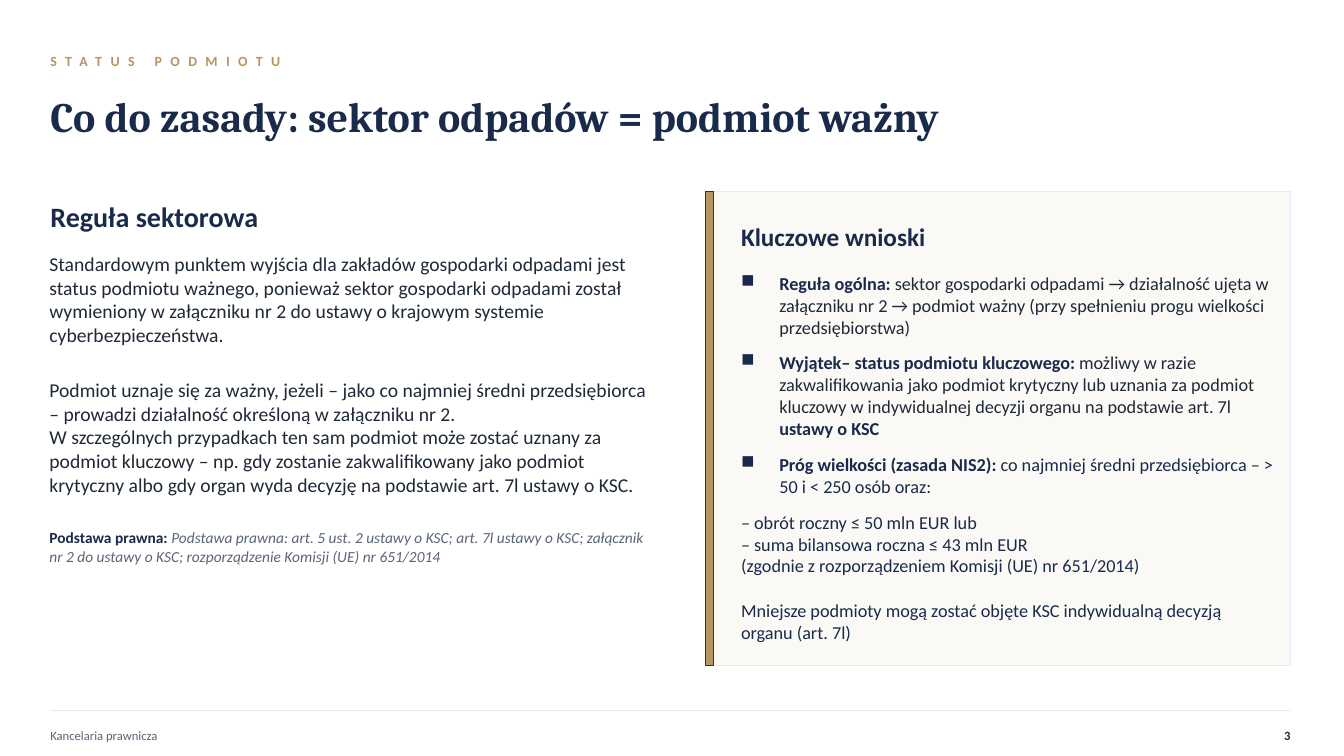
"""Build the slide on the status of entities in the waste sector."""
import pptx
import pptx.dml.color
import pptx.enum.shapes
import pptx.enum.text
import pptx.oxml
import pptx.oxml.ns
import pptx.util

Inches = pptx.util.Inches
Pt = pptx.util.Pt
ALIGN = pptx.enum.text.PP_ALIGN
ANCHOR = pptx.enum.text.MSO_ANCHOR

COLORS = {
    "navy": "1A2A4A",
    "ink": "1F2937",
    "gray": "5B6478",
    "gold": "B8945F",
    "cream": "FAF9F6",
    "rule": "E8EAF0",
    "edge": "333333",
}

RULE = [
    (6, [("Standardowym punktem wyjścia dla zakładów gospodarki odpadami jest "
          "status podmiotu ważnego, ponieważ sektor gospodarki odpadami został "
          "wymieniony w załączniku nr 2 do ustawy o krajowym systemie "
          "cyberbezpieczeństwa.", "ink", "")]),
    (0, [("Podmiot uznaje się za ważny, jeżeli – jako co najmniej średni "
          "przedsiębiorca – prowadzi działalność określoną w załączniku nr 2.",
          "ink", "")]),
    (6, [("W szczególnych przypadkach ten sam podmiot może zostać uznany za "
          "podmiot kluczowy – np. gdy zostanie zakwalifikowany jako podmiot "
          "krytyczny albo gdy organ wyda decyzję na podstawie art. 7l ustawy "
          "o KSC.", "ink", "")]),
    (0, [("Podstawa prawna: ", "navy", "b"),
         ("Podstawa prawna: art. 5 ust. 2 ustawy o KSC; art. 7l ustawy o KSC; "
          "załącznik nr 2 do ustawy o KSC; rozporządzenie Komisji (UE) "
          "nr 651/2014", "gray", "i")]),
]

POINTS = [
    (10, [("Reguła ogólna: ", "navy", "b"),
          ("sektor gospodarki odpadami → działalność ujęta w załączniku nr 2 → "
           "podmiot ważny (przy spełnieniu progu wielkości przedsiębiorstwa)",
           "ink", "")]),
    (10, [("Wyjątek– status podmiotu kluczowego: ", "navy", "b"),
          ("możliwy w razie zakwalifikowania jako podmiot krytyczny lub uznania "
           "za podmiot kluczowy w indywidualnej decyzji organu na podstawie "
           "art. 7l ", "ink", ""),
          ("ustawy o KSC", "navy", "b")]),
    (10, [("Próg wielkości (zasada NIS2): ", "navy", "b"),
          ("co najmniej średni przedsiębiorca – > 50 i < 250 osób oraz:",
           "navy", "")]),
    (0, [("– obrót roczny ≤ 50 mln EUR lub", "navy", "")]),
    (0, [("– suma bilansowa roczna ≤ 43 mln EUR", "navy", "")]),
    (16, [("(zgodnie z rozporządzeniem Komisji (UE) nr 651/2014)", "navy", "")]),
    (0, [("Mniejsze podmioty mogą zostać objęte KSC indywidualną decyzją organu "
          "(art. 7l)", "navy", "")]),
]


def paint(hue):
    """Return the named colour."""
    return pptx.dml.color.RGBColor.from_string(COLORS[hue])


def style(font, size, hue, bold=False, face="Calibri"):
    """Format a font."""
    font.name = face
    font.size = Pt(size)
    font.bold = bold
    font.color.rgb = paint(hue)


def frame(shape, anchor):
    """Clear the margins of a text shape and return its frame."""
    text = shape.text_frame
    text.word_wrap = True
    text.auto_size = pptx.enum.text.MSO_AUTO_SIZE.NONE
    text.vertical_anchor = anchor
    text.margin_left = text.margin_right = 0
    text.margin_top = text.margin_bottom = 0
    return text


def label(slide, box, words, size, hue, bold=True, align=ALIGN.LEFT):
    """Add one line of text and return its run."""
    shape = slide.shapes.add_textbox(*map(Inches, box))
    line = frame(shape, ANCHOR.MIDDLE).paragraphs[0]
    line.text = words
    line.alignment = align
    style(line.runs[0].font, size, hue, bold)
    return line.runs[0]


def head(slide, words):
    """Place and format the title."""
    title = slide.shapes.title
    title.left, title.top = Inches(0.5), Inches(0.8)
    title.width, title.height = Inches(11.32), Inches(0.7)
    line = frame(title, ANCHOR.MIDDLE).paragraphs[0]
    line.text = words
    line.alignment = ALIGN.LEFT
    style(line.runs[0].font, 30, "navy", True, "Cambria")


def body(slide, box, parts, size):
    """Add a block of mixed paragraphs and return them."""
    shape = slide.shapes.add_textbox(*map(Inches, box))
    text = frame(shape, ANCHOR.TOP)
    for num, (after, runs) in enumerate(parts):
        line = text.add_paragraph() if num else text.paragraphs[0]
        line.space_after = Pt(after)
        for words, hue, mark in runs:
            run = line.add_run()
            run.text = words
            style(run.font, size, hue, mark == "b")
            run.font.italic = mark == "i"
    return text.paragraphs


def bullet(line):
    """Give a paragraph a square bullet and a hanging indent."""
    props = line._p.get_or_add_pPr()
    props.set("marL", str(Inches(0.38)))
    props.set("indent", str(Inches(-0.38)))
    space = pptx.oxml.ns.nsdecls("a")
    props.append(pptx.oxml.parse_xml(f'<a:buChar {space} char="■"/>'))


def block(slide, box, fill, edge, width):
    """Add an outlined rectangle."""
    kind = pptx.enum.shapes.MSO_SHAPE.RECTANGLE
    shape = slide.shapes.add_shape(kind, *map(Inches, box))
    shape.shadow.inherit = False
    shape.fill.solid()
    shape.fill.fore_color.rgb = paint(fill)
    shape.line.color.rgb = paint(edge)
    shape.line.width = Pt(width)


def rule(slide, left, right, top):
    """Add a thin level line."""
    kind = pptx.enum.shapes.MSO_CONNECTOR.STRAIGHT
    ends = map(Inches, (left, top, right, top))
    line = slide.shapes.add_connector(kind, *ends)
    line.line.color.rgb = paint("rule")
    line.line.width = Pt(0.75)
    space = pptx.oxml.ns.nsdecls("a")
    effect = pptx.oxml.parse_xml(f"<a:effectLst {space}/>")
    line._element.spPr.append(effect)


def main():
    """Build and save the slide."""
    deck = pptx.Presentation()
    deck.slide_width, deck.slide_height = Inches(13.33), Inches(7.5)
    slide = deck.slides.add_slide(deck.slide_layouts[5])

    tag = label(slide, (0.5, 0.45, 8, 0.3), "STATUS PODMIOTU", 10, "gold")
    tag._r.get_or_add_rPr().set("spc", "600")
    head(slide, "Co do zasady: sektor odpadów = podmiot ważny")

    label(slide, (0.5, 1.9, 6, 0.5), "Reguła sektorowa", 20, "navy")
    lines = body(slide, (0.49, 2.5, 6, 4.1), RULE, 14)
    for num in (1, 3):
        lines[num].space_before = Pt(17)
    for run in lines[3].runs:
        run.font.size = Pt(11)

    block(slide, (7, 1.9, 5.8, 4.7), "cream", "rule", 0.75)
    block(slide, (7, 1.9, 0.08, 4.7), "gold", "edge", 1)
    label(slide, (7.35, 2.1, 5.3, 0.5), "Kluczowe wnioski", 18, "navy")
    for line in body(slide, (7.35, 2.7, 5.3, 3.7), POINTS, 13)[:3]:
        bullet(line)

    rule(slide, 0.5, 12.8, 7.05)
    label(slide, (0.5, 7.15, 5, 0.3), "Kancelaria prawnicza", 9, "gray", False)
    label(slide, (12.3, 7.15, 0.5, 0.3), "3", 9, "navy", align=ALIGN.RIGHT)
    deck.save("out.pptx")


if __name__ == "__main__":
    main()
